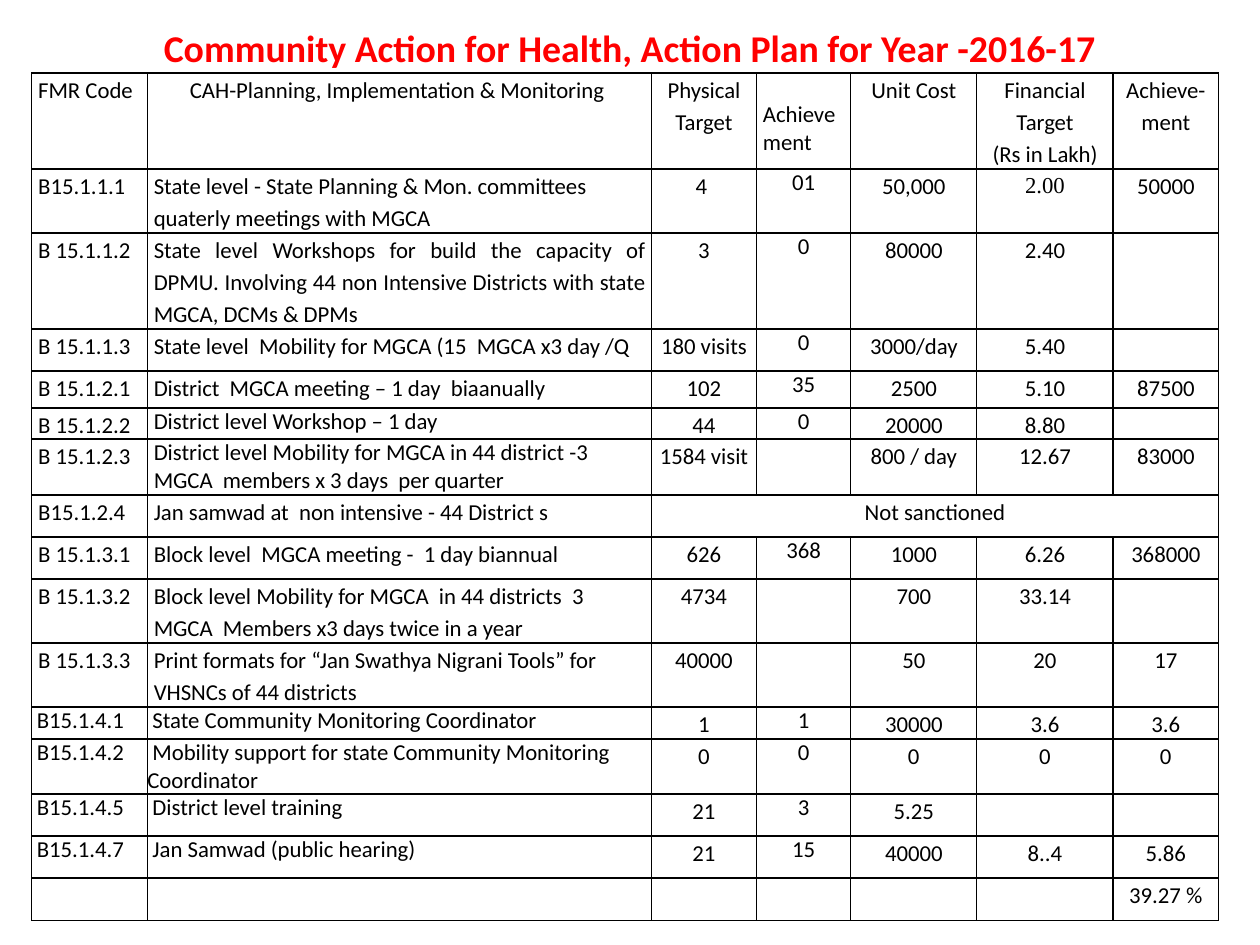
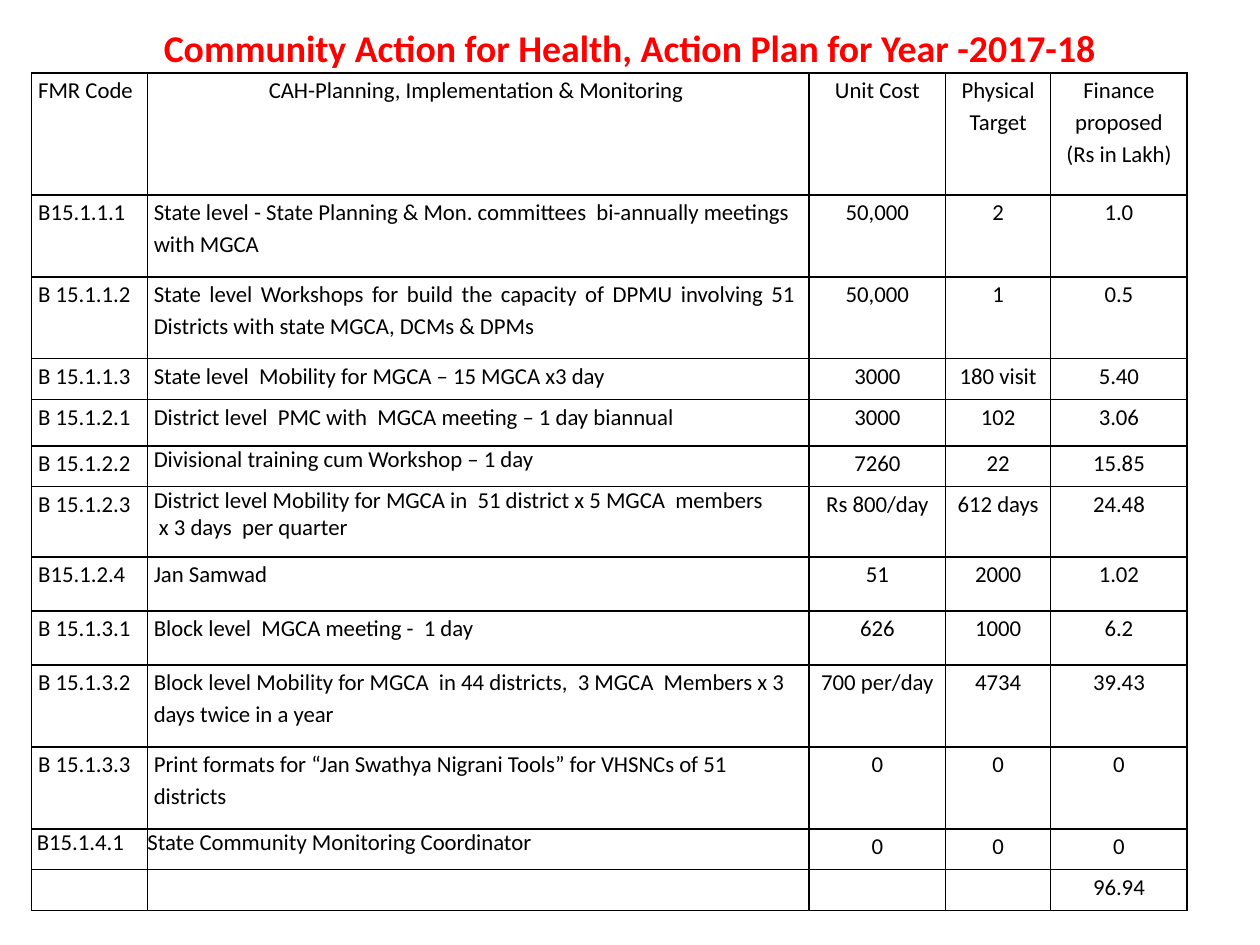
"""Build the two yearly action plan tables for Community Action for Health."""
from lxml import etree
from pptx import Presentation
from pptx.dml.color import RGBColor
from pptx.enum.text import MSO_ANCHOR, PP_ALIGN
from pptx.oxml.ns import qn
from pptx.util import Cm, Pt

LEFT, CENTER, JUSTIFY = PP_ALIGN.LEFT, PP_ALIGN.CENTER, PP_ALIGN.JUSTIFY
MIDDLE = MSO_ANCHOR.MIDDLE
COLORS = {"title": "FF0000", "text": "000000", "border": "000000", "page": "FFFFFF"}
FONT = "Calibri"
BODY_SIZE = Pt(13)
SINGLE_SPACED = ("District level Workshop", "District level Mobility", "Divisional")

PLANS = [
    {
        "year": "2016-17",
        "widths": [2.33, 10.16, 2.12, 1.9, 2.54, 2.75, 2.12],
        "heights": [1.94, 1.29, 1.93, 0.85, 0.74, 0.63, 1.12, 0.85,
                    0.85, 1.29, 1.29, 0.64, 1.11, 0.85, 0.85, 0.85],
        "rows": [
            ["FMR Code", "CAH-Planning, Implementation & Monitoring ", "Physical Target",
             " Achievement", "Unit Cost", "Financial Target\n(Rs in Lakh)", "Achieve-ment"],
            ["B15.1.1.1", "State level - State Planning & Mon. committees  quaterly meetings with MGCA",
             "4 ", "01", "50,000", "2.00", "50000"],
            ["B 15.1.1.2", "State level Workshops for build the capacity of DPMU. Involving 44 non "
             "Intensive Districts with state MGCA, DCMs & DPMs ", "3", "0", "80000", "2.40", ""],
            ["B 15.1.1.3", "State level  Mobility for MGCA (15  MGCA x3 day /Q",
             "180 visits", "0", "3000/day", "5.40", ""],
            ["B 15.1.2.1", "District  MGCA meeting – 1 day  biaanually",
             "102", "35", "2500", "5.10", "87500"],
            ["B 15.1.2.2", "District level Workshop – 1 day", "44", "0", "20000", "8.80", ""],
            ["B 15.1.2.3", "District level Mobility for MGCA in 44 district -3 MGCA  members x 3 days  "
             "per quarter", "1584 visit", "", "800 / day", "12.67", "83000"],
            ["B15.1.2.4", "Jan samwad at  non intensive - 44 District s", "Not sanctioned"],
            ["B 15.1.3.1", "Block level  MGCA meeting -  1 day biannual",
             "626", "368", "1000", "6.26", "368000"],
            ["B 15.1.3.2", "Block level Mobility for MGCA  in 44 districts  3 MGCA  Members x3 days "
             "twice in a year", "4734", "", "700", "33.14", ""],
            ["B 15.1.3.3", "Print formats for “Jan Swathya Nigrani Tools” for VHSNCs of 44 districts",
             "40000", "", "50", "20", "17"],
            [" B15.1.4.1", " State Community Monitoring Coordinator", "1", "1", "30000", "3.6", "3.6"],
            [" B15.1.4.2", " Mobility support for state Community Monitoring Coordinator",
             "0", "0", "0", "0", "0"],
            [" B15.1.4.5", " District level training", "21", "3", "5.25", "", ""],
            [" B15.1.4.7", " Jan Samwad (public hearing)", "21", "15", "40000", "8..4", "5.86"],
            ["", "", "", "", "", "", "39.27 %"],
        ],
    },
    {
        "year": "2017-18",
        "widths": [2.33, 13.34, 2.75, 2.12, 2.75],
        "heights": [2.46, 1.65, 1.65, 0.82, 0.94, 0.82, 1.42, 1.09, 1.09, 1.65, 1.65, 0.82, 0.82],
        "rows": [
            ["FMR Code", "CAH-Planning, Implementation & Monitoring ", "Unit Cost",
             "Physical Target", "Finance proposed\n(Rs in Lakh)"],
            ["B15.1.1.1", "State level - State Planning & Mon. committees  bi-annually meetings with MGCA",
             "50,000", "2", "1.0"],
            ["B 15.1.1.2", "State level Workshops for build the capacity of DPMU involving 51  "
             "Districts with state MGCA, DCMs & DPMs ", "50,000", "1", "0.5"],
            ["B 15.1.1.3", "State level  Mobility for MGCA – 15 MGCA x3 day", "3000", "180 visit", "5.40"],
            ["B 15.1.2.1", "District level  PMC with  MGCA meeting – 1 day biannual",
             "3000", "102", "3.06"],
            ["B 15.1.2.2", "Divisional training cum Workshop – 1 day", "7260", "22", "15.85"],
            ["B 15.1.2.3", "District level Mobility for MGCA in  51 district x 5 MGCA  members\n"
             " x 3 days  per quarter", "Rs 800/day", "612 days", "24.48"],
            ["B15.1.2.4", "Jan Samwad", "51", "2000", "1.02"],
            ["B 15.1.3.1", "Block level  MGCA meeting -  1 day", "626", "1000", "6.2"],
            ["B 15.1.3.2", "Block level Mobility for MGCA  in 44 districts,  3 MGCA  Members x 3 days "
             "twice in a year", "700 per/day", "4734", "39.43"],
            ["B 15.1.3.3", "Print formats for “Jan Swathya Nigrani Tools” for VHSNCs of 51 districts",
             "0", "0", "0"],
            [" B15.1.4.1", "State Community Monitoring Coordinator", "0", "0", "0"],
            ["", "", "", "", "96.94"],
        ],
    },
]


def style_run(run, size, color, bold=False):
    run.font.name = FONT
    run.font.size = size
    run.font.bold = bold
    run.font.color.rgb = RGBColor.from_string(color)


def add_borders(cell):
    cell_properties = cell._tc.get_or_add_tcPr()
    for position, side in enumerate(("lnL", "lnR", "lnT", "lnB")):
        line = etree.Element(qn(f"a:{side}"), w=str(Pt(1)))
        fill = etree.SubElement(line, qn("a:solidFill"))
        etree.SubElement(fill, qn("a:srgbClr"), val=COLORS["border"])
        cell_properties.insert(position, line)


prs = Presentation()
prs.slide_width, prs.slide_height = Cm(25.4), Cm(19.05)

for plan in PLANS:
    slide = prs.slides.add_slide(prs.slide_layouts[6])
    slide.background.fill.solid()
    slide.background.fill.fore_color.rgb = RGBColor.from_string(COLORS["page"])

    rows, widths, heights = plan["rows"], plan["widths"], plan["heights"]
    headline = slide.shapes.add_textbox(Cm(1.27), Cm(0.45), Cm(22.86), Cm(1)).text_frame
    headline.word_wrap = True
    headline.vertical_anchor = MIDDLE
    headline.margin_top = headline.margin_bottom = 0
    headline.text = f"Community Action for Health, Action Plan for Year -{plan['year']}"
    headline.paragraphs[0].alignment = CENTER
    style_run(headline.paragraphs[0].runs[0], Pt(21.6), COLORS["title"], bold=True)

    budget = slide.shapes.add_table(len(rows), len(widths), Cm(0.64), Cm(1.47),
                                    Cm(sum(widths)), Cm(sum(heights))).table
    budget.first_row = budget.horz_banding = False
    for column, width in zip(budget.columns, widths):
        column.width = Cm(width)
    for row, height in zip(budget.rows, heights):
        row.height = Cm(height)

    for r, entries in enumerate(rows):
        for c, header in enumerate(rows[0]):
            entry = entries[c] if c < len(entries) else ""
            cell = budget.cell(r, c)
            flush = c < 2 and entries[0].startswith(" ")
            cell.margin_left = cell.margin_right = 0 if flush else Cm(0.13)
            cell.margin_top = cell.margin_bottom = 0
            cell.fill.background()
            add_borders(cell)
            cell.text_frame.text = entry

            single = flush or header == " Achievement" or entry.startswith(SINGLE_SPACED)
            if entry.startswith("State level Workshops"):
                alignment = JUSTIFY
            elif c == 0 or (c == 1 and r > 0) or entry == " Achievement":
                alignment = LEFT
            else:
                alignment = CENTER
            for paragraph in cell.text_frame.paragraphs:
                paragraph.alignment = alignment
                paragraph.line_spacing = 1.0 if single else 1.15
                if entry.startswith("Print formats"):
                    paragraph.space_after = Pt(10)
                for run in paragraph.runs:
                    style_run(run, BODY_SIZE, COLORS["text"])
                    if entry == "2.00":
                        run.font.name = "Times New Roman"
                if not entry:
                    etree.SubElement(paragraph._p, qn("a:endParaRPr"), sz="1300")
        if len(entries) < len(widths):
            budget.cell(r, len(entries) - 1).merge(budget.cell(r, len(widths) - 1))

prs.save("out.pptx")
